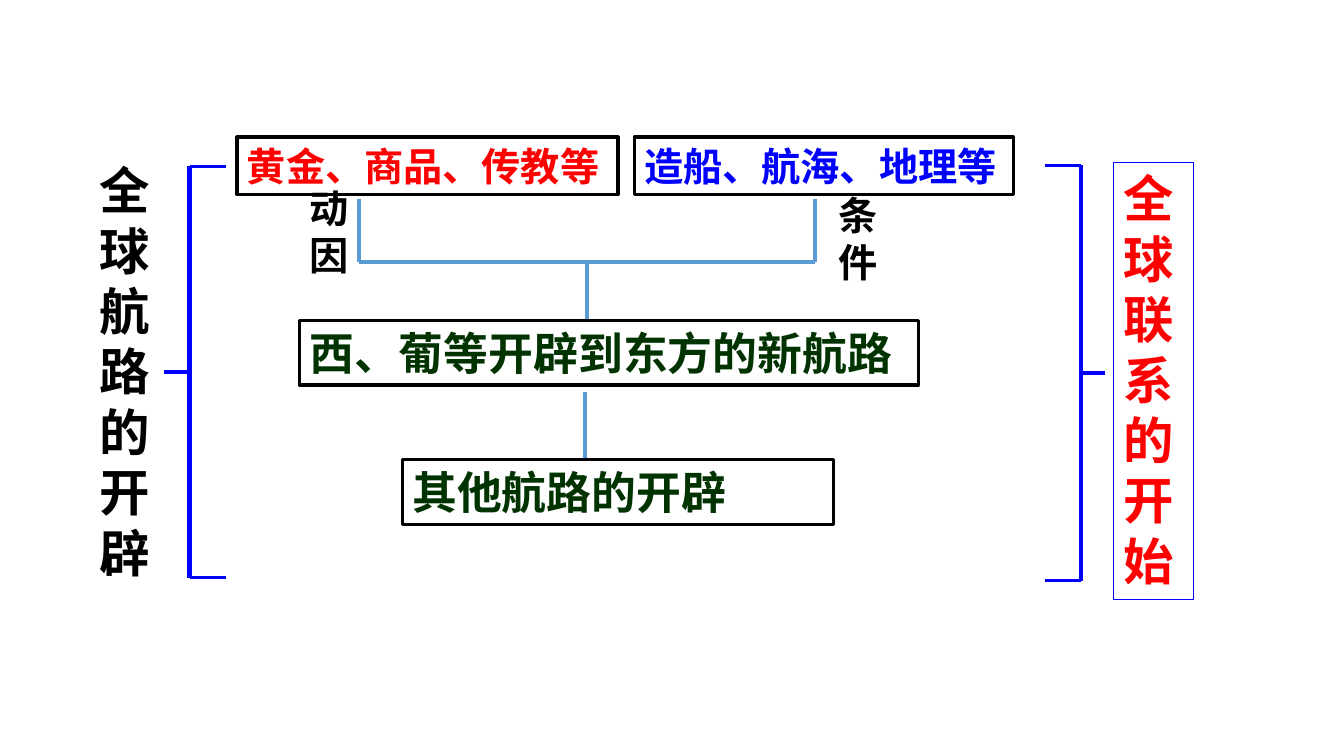
from typing import NamedTuple, Optional

from lxml import etree
from pptx import Presentation
from pptx.dml.color import RGBColor
from pptx.enum import shapes, text
from pptx.oxml import ns
from pptx.util import Inches, Pt

FONT = "Noto Sans CJK SC"
COLORS = {
    "black": "000000",
    "white": "FFFFFF",
    "red": "FF0000",
    "blue": "0000FF",
    "green": "003300",
    "sky": "5B9BD5",
}


class Label(NamedTuple):
    words: str
    left: float
    top: float
    width: float
    height: float
    size: int
    color: str
    border: Optional[str] = None
    border_width: float = 2.25
    fill: Optional[str] = None


class Stroke(NamedTuple):
    x1: float
    y1: float
    x2: float
    y2: float
    color: str = "sky"
    width: float = 3


class Bracket(NamedTuple):
    spine: float
    tip: float
    stem: float
    top: float
    bottom: float


def rgb(name: str) -> RGBColor:
    return RGBColor.from_string(COLORS[name])


def draw_label(slide, label: Label) -> None:
    area = [Inches(v) for v in label[1:5]]
    if label.border:
        holder = slide.shapes.add_shape(shapes.MSO_SHAPE.RECTANGLE, *area)
        holder.shadow.inherit = False
        holder.line.color.rgb = rgb(label.border)
        holder.line.width = Pt(label.border_width)
        if label.fill:
            holder.fill.solid()
            holder.fill.fore_color.rgb = rgb(label.fill)
        else:
            holder.fill.background()
    else:
        holder = slide.shapes.add_textbox(*area)

    frame = holder.text_frame
    frame.text = label.words
    frame.word_wrap = True
    frame.auto_size = text.MSO_AUTO_SIZE.SHAPE_TO_FIT_TEXT
    frame.vertical_anchor = text.MSO_ANCHOR.TOP
    paragraph = frame.paragraphs[0]
    paragraph.alignment = text.PP_ALIGN.LEFT
    font = paragraph.runs[0].font
    font.name = FONT
    font.size = Pt(label.size)
    font.bold = True
    font.color.rgb = rgb(label.color)
    # Chinese characters take the East Asian typeface
    properties = paragraph.runs[0]._r.get_or_add_rPr()
    etree.SubElement(properties, ns.qn("a:ea")).set("typeface", FONT)


def draw_stroke(slide, stroke: Stroke) -> None:
    ends = [Inches(v) for v in stroke[:4]]
    line = slide.shapes.add_connector(shapes.MSO_CONNECTOR.STRAIGHT, *ends)
    line.line.color.rgb = rgb(stroke.color)
    line.line.width = Pt(stroke.width)
    etree.SubElement(line._element.spPr, ns.qn("a:effectLst"))


def draw_bracket(slide, bracket: Bracket) -> None:
    spine, tip, stem, top, bottom = bracket
    middle = (top + bottom) / 2
    for y in (top, bottom):
        draw_stroke(slide, Stroke(tip, y, spine, y, "blue", 2.25))
    draw_stroke(slide, Stroke(spine, top, spine, bottom, "blue"))
    draw_stroke(slide, Stroke(spine, middle, stem, middle, "blue"))


# Topic on the left, outcome on the right
TOPIC = Label("全球航路的开辟", 0.89, 1.53, 0.83, 4.34, 36, "black")
OUTCOME = Label("全球联系的开始", 11.04, 1.61, 0.8, 4.34, 36, "red",
                "blue", 0.75, "white")
BRACKETS = [
    Bracket(spine=1.88, tip=2.24, stem=1.63, top=1.65, bottom=5.73),
    Bracket(spine=10.72, tip=10.36, stem=10.96, top=1.64, bottom=5.76),
]

# Boxes of the flow and the captions beside its branches
FLOW = [
    Label("黄金、商品、传教等", 2.35, 1.36, 3.78, 0.57, 28, "red", "black"),
    Label("造船、航海、地理等", 6.29, 1.36, 3.76, 0.57, 28, "blue", "black"),
    Label("西、葡等开辟到东方的新航路", 2.97, 3.18, 6.14, 0.64, 32, "green", "black"),
    Label("其他航路的开辟", 3.99, 4.56, 4.28, 0.64, 32, "green", "black"),
    Label("动因", 2.97, 1.78, 0.59, 1.04, 28, "black"),
    Label("条件", 8.22, 1.85, 0.59, 1.04, 28, "black"),
]

# Lines joining motives and conditions to the new routes
MOTIVE_X, CONDITION_X, JOIN_Y = 3.56, 8.08, 2.6
JOIN_X = (MOTIVE_X + CONDITION_X) / 2
LINKS = [
    Stroke(MOTIVE_X, 1.97, MOTIVE_X, JOIN_Y),
    Stroke(CONDITION_X, 1.97, CONDITION_X, JOIN_Y),
    Stroke(MOTIVE_X, JOIN_Y, CONDITION_X, JOIN_Y),
    Stroke(JOIN_X, JOIN_Y, JOIN_X, 3.18),
    Stroke(5.8, 3.89, 5.8, 4.56),
]


def main() -> None:
    deck = Presentation()
    deck.slide_width, deck.slide_height = Inches(13.33), Inches(7.5)
    slide = deck.slides.add_slide(deck.slide_layouts[6])
    for bracket in BRACKETS:
        draw_bracket(slide, bracket)
    for link in LINKS:
        draw_stroke(slide, link)
    for label in [TOPIC, OUTCOME, *FLOW]:
        draw_label(slide, label)
    deck.save("out.pptx")


if __name__ == "__main__":
    main()
